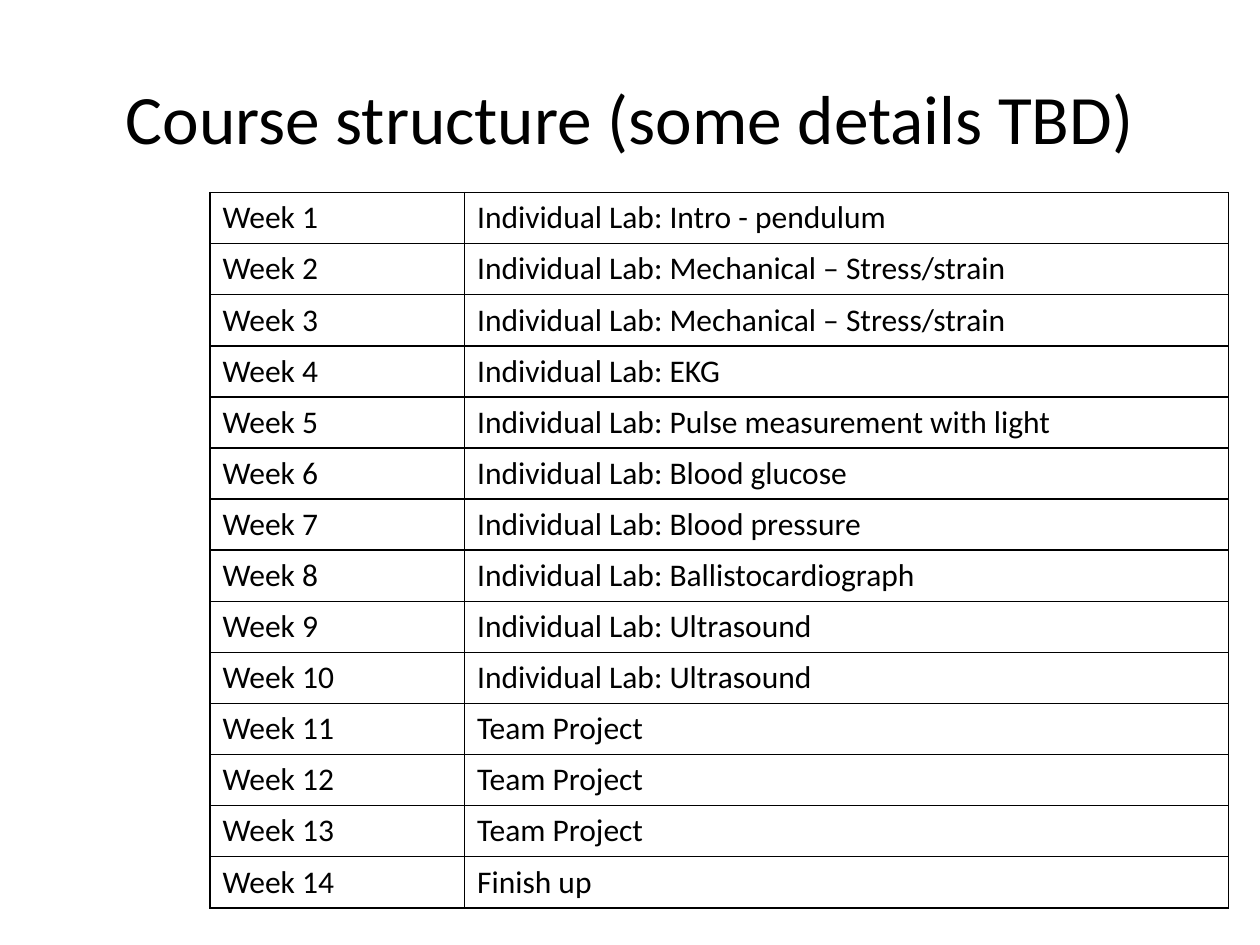
from lxml import etree
from pptx import Presentation
from pptx.dml.color import RGBColor
from pptx.enum.text import MSO_ANCHOR, PP_ALIGN
from pptx.oxml.ns import qn
from pptx.util import Pt

MIDDLE = MSO_ANCHOR.MIDDLE
LEFT, CENTER = PP_ALIGN.LEFT, PP_ALIGN.CENTER
COLORS = {"text": "000000", "border": "000000", "background": "FFFFFF"}
FONT = "Calibri"
ROW_HEIGHT = 29.2
COLUMN_WIDTHS = (145.5, 436.5)

TOPICS = (
    "Individual Lab: Intro - pendulum",
    "Individual Lab: Mechanical – Stress/strain",
    "Individual Lab: Mechanical – Stress/strain",
    "Individual Lab: EKG",
    "Individual Lab: Pulse measurement with light",
    "Individual Lab: Blood glucose",
    "Individual Lab: Blood pressure",
    "Individual Lab: Ballistocardiograph",
    "Individual Lab: Ultrasound",
    "Individual Lab: Ultrasound",
    "Team Project",
    "Team Project",
    "Team Project",
    "Finish up",
)


def write_text(frame, text, size=18, align=LEFT, color=COLORS["text"]):
    para = frame.paragraphs[0]
    para.alignment = align
    span = para.add_run()
    span.text = text
    span.font.name = FONT
    span.font.size = Pt(size)
    span.font.color.rgb = RGBColor.from_string(color)


def add_borders(cell, color=COLORS["border"], width=1):
    """Line all four sides; the lines must precede the fill in the cell XML."""
    properties = cell._tc.get_or_add_tcPr()
    for position, side in enumerate(("a:lnL", "a:lnR", "a:lnT", "a:lnB")):
        line = etree.Element(qn(side), w=str(Pt(width)))
        fill = etree.SubElement(line, qn("a:solidFill"))
        etree.SubElement(fill, qn("a:srgbClr"), val=color)
        properties.insert(position, line)


deck = Presentation()
deck.slide_width, deck.slide_height = Pt(720), Pt(540)
page = deck.slides.add_slide(deck.slide_layouts[6])
page.background.fill.solid()
page.background.fill.fore_color.rgb = RGBColor.from_string(COLORS["background"])

# Title
title_box = page.shapes.add_textbox(Pt(36), Pt(21.6), Pt(648), Pt(90))
title_box.text_frame.word_wrap = True
title_box.text_frame.vertical_anchor = MIDDLE
write_text(title_box.text_frame, "Course structure (some details TBD)",
           size=39.6, align=CENTER)

# Weekly schedule
schedule = page.shapes.add_table(
    len(TOPICS), len(COLUMN_WIDTHS), Pt(120), Pt(110),
    Pt(sum(COLUMN_WIDTHS)), Pt(ROW_HEIGHT * len(TOPICS))).table
schedule.first_row = False
schedule.horz_banding = False
for column, width in zip(schedule.columns, COLUMN_WIDTHS):
    column.width = Pt(width)
for index, topic in enumerate(TOPICS):
    schedule.rows[index].height = Pt(ROW_HEIGHT)
    for column_index, text in enumerate((f"Week {index + 1}", topic)):
        cell = schedule.cell(index, column_index)
        cell.fill.background()
        add_borders(cell)
        write_text(cell.text_frame, text)

deck.save("out.pptx")
